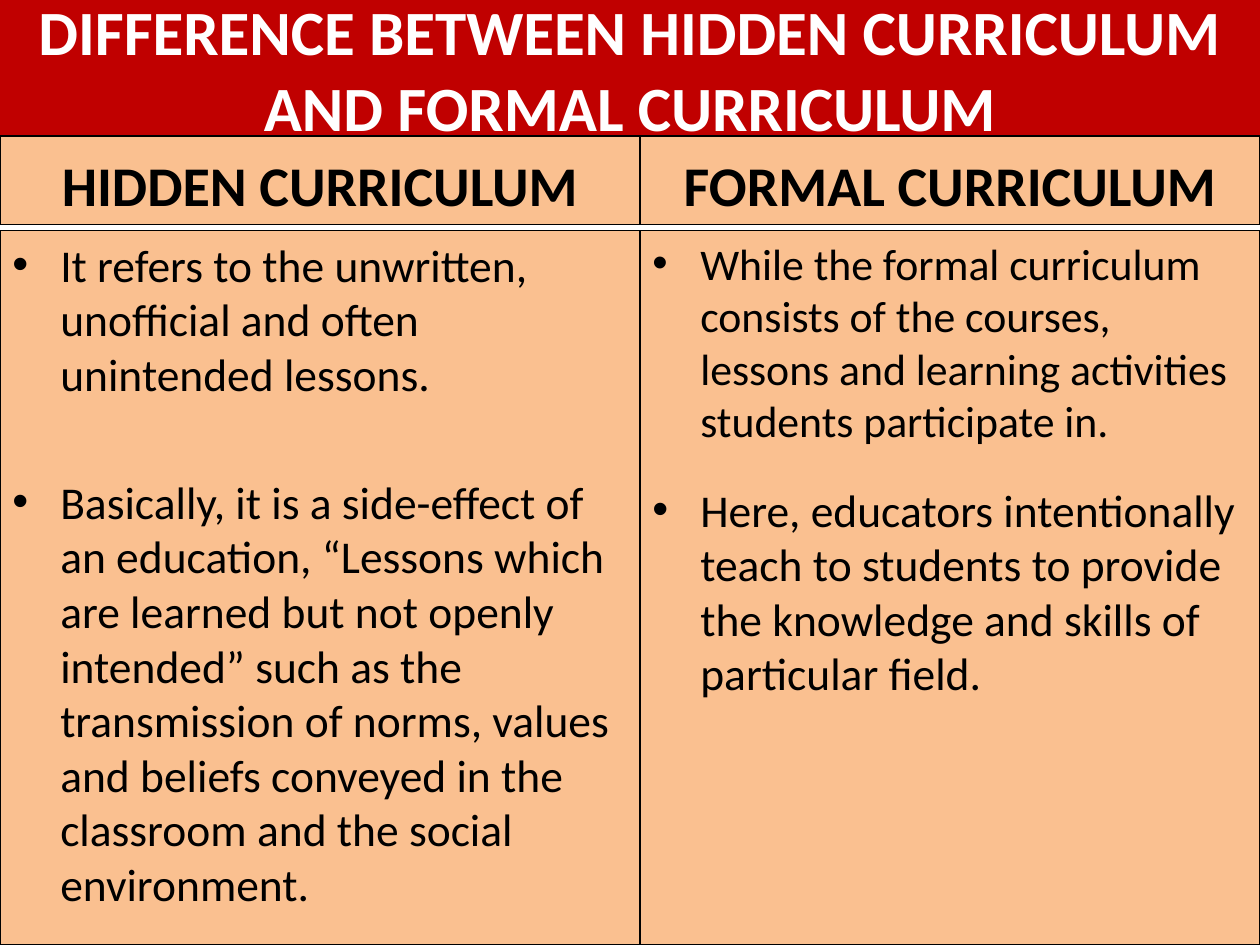
from pptx import Presentation
from pptx import util as u
from pptx.dml.color import RGBColor
from pptx.enum import shapes, text
from lxml import etree

RED = RGBColor(0xC0, 0x00, 0x00)
PEACH = RGBColor(0xFA, 0xC0, 0x90)
BLACK = RGBColor(0x00, 0x00, 0x00)
WHITE = RGBColor(0xFF, 0xFF, 0xFF)

SLIDE_W, SLIDE_H = 10, 7.5
TITLE_H, HEADING_H, BODY_TOP, SPLIT = 1.08, 0.7, 1.83, 5.08


def write(paragraph, wording, color, **font_values):
    run = paragraph.add_run()
    run.text = wording
    run.font.color.rgb = color
    for key, value in {"name": "Calibri", **font_values}.items():
        setattr(run.font, key, value)


def panel(left, top, width, height, anchor):
    box = slide.shapes.add_shape(shapes.MSO_SHAPE.RECTANGLE, *map(u.Inches, (left, top, width, height)))
    box.shadow.inherit = False
    box.fill.solid()
    box.fill.fore_color.rgb = PEACH
    box.line.color.rgb = BLACK
    box.line.width = u.Pt(0.75)
    box.text_frame.word_wrap = True
    box.text_frame.vertical_anchor = anchor
    return box.text_frame


prs = Presentation()
prs.slide_width, prs.slide_height = u.Inches(SLIDE_W), u.Inches(SLIDE_H)
slide = prs.slides.add_slide(prs.slide_layouts[5])

title = slide.shapes.title
bounds = {"left": 0, "top": 0, "width": SLIDE_W, "height": TITLE_H}
for side, inches in bounds.items():
    setattr(title, side, u.Inches(inches))
title.fill.solid()
title.fill.fore_color.rgb = RED
title_format = {
    "word_wrap": True,
    "auto_size": text.MSO_AUTO_SIZE.NONE,
    "vertical_anchor": text.MSO_ANCHOR.MIDDLE,
}
for key, value in title_format.items():
    setattr(title.text_frame, key, value)
title_line = title.text_frame.paragraphs[0]
title_line.alignment = text.PP_ALIGN.CENTER
write(title_line, "DIFFERENCE BETWEEN HIDDEN CURRICULUM AND FORMAL CURRICULUM",
      WHITE, size=u.Pt(36), bold=True)

curricula = [
    (0, SPLIT, "HIDDEN CURRICULUM", [
        ("It refers to the unwritten, unofficial and often unintended lessons.", 26, 5),
        ("Basically, it is a side-effect of an education, “Lessons which are learned but not "
         "openly intended” such as the transmission of norms, values and beliefs conveyed in "
         "the classroom and the social environment.", 26, 42),
    ]),
    (SPLIT, SLIDE_W - SPLIT, "FORMAL CURRICULUM", [
        ("While the formal curriculum consists of the courses, lessons and learning activities "
         "students participate in.", 25, 5),
        ("Here, educators intentionally teach to students to provide the knowledge and skills "
         "of particular field.", 26, 20),
    ]),
]

for left, width, heading, points in curricula:
    heading_line = panel(left, TITLE_H, width, HEADING_H, text.MSO_ANCHOR.BOTTOM).paragraphs[0]
    heading_line.alignment = text.PP_ALIGN.CENTER
    heading_line.space_before = u.Pt(6)
    write(heading_line, heading, BLACK, size=u.Pt(32), bold=True)

    body = panel(left, BODY_TOP, width, SLIDE_H - BODY_TOP, text.MSO_ANCHOR.TOP)
    for index, (wording, size, gap) in enumerate(points):
        point = body.add_paragraph() if index else body.paragraphs[0]
        point.alignment = text.PP_ALIGN.LEFT
        point.space_before = u.Pt(gap)
        write(point, wording, BLACK, size=u.Pt(size))
        properties = point._p.get_or_add_pPr()
        properties.set("marL", str(u.Inches(0.38)))
        properties.set("indent", str(u.Inches(-0.38)))
        namespace = properties.nsmap["a"]
        etree.SubElement(properties, f"{{{namespace}}}buFont", typeface="Arial")
        etree.SubElement(properties, f"{{{namespace}}}buChar", char="•")

prs.save("out.pptx")
